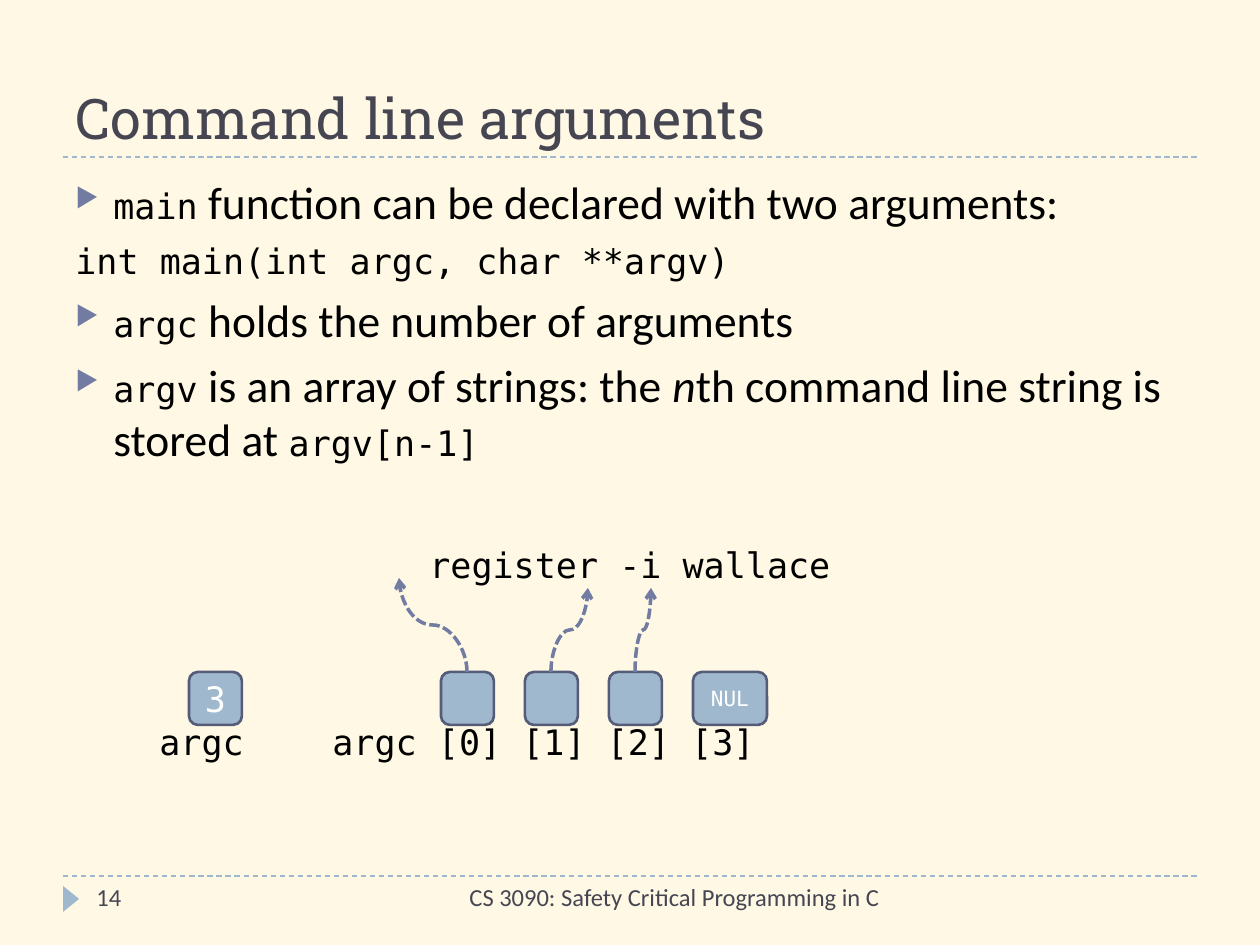
"""Build the slide on command line arguments in C."""
from lxml.etree import SubElement
from pptx import Presentation
from pptx.dml.color import RGBColor
from pptx.enum.dml import MSO_LINE as Dash
from pptx.enum.shapes import MSO_CONNECTOR as Connector, MSO_SHAPE as Shape
from pptx.enum.text import MSO_ANCHOR as Anchor, PP_ALIGN as Align
from pptx.oxml.ns import qn
from pptx.util import Pt

PX = 914400 // 126
CREAM = RGBColor(0xFE, 0xF8, 0xE4)
SLATE = RGBColor(0x46, 0x46, 0x53)
BLUE = RGBColor(0x9F, 0xB8, 0xCD)
BORDER = RGBColor(0x54, 0x5C, 0x79)
ACCENT = RGBColor(0x72, 0x7C, 0xA3)
BLACK = RGBColor(0, 0, 0)
WHITE = RGBColor(0xFF, 0xFF, 0xFF)
SANS, MONO, SLAB = "Calibri", "DejaVu Sans Mono", "Roboto Slab"


def add_run(paragraph, text, font, size, color):
    run = paragraph.add_run()
    run.text = text
    run.font.name, run.font.size = font, Pt(size)
    run.font.color.rgb = color
    return run


def add_text(left, top, width, height, text, font, size, color, wrap=True):
    box = slide.shapes.add_textbox(left * PX, top * PX, width * PX, height * PX)
    box.text_frame.word_wrap = wrap
    if text:
        add_run(box.text_frame.paragraphs[0], text, font, size, color)
    return box.text_frame


presentation = Presentation()
presentation.slide_width, presentation.slide_height = 1260 * PX, 945 * PX
slide = presentation.slides.add_slide(presentation.slide_layouts[6])
slide.background.fill.solid()
slide.background.fill.fore_color.rgb = CREAM

for y in (876, 157):
    rule = slide.shapes.add_connector(Connector.STRAIGHT, 63 * PX, y * PX, 1197 * PX, y * PX)
    rule.line.color.rgb, rule.line.width = BLUE, Pt(0.75)
    rule.line.dash_style = Dash.DASH
    SubElement(rule._element.spPr, qn("a:effectLst"))

marker = slide.shapes.add_shape(Shape.ISOSCELES_TRIANGLE, 58 * PX, 891 * PX, 26 * PX, 16 * PX)
marker.rotation = 90
marker.shadow.inherit = False
marker.fill.solid()
marker.fill.fore_color.rgb = BLUE
marker.line.fill.background()

title = add_text(63, 21, 1134, 136, "Command line arguments", SLAB, 32, SLATE)
title.vertical_anchor = Anchor.BOTTOM
footer = add_text(399, 876, 493, 50, "CS 3090: Safety Critical Programming in C", SANS, 14, SLATE)
footer.paragraphs[0].alignment = Align.RIGHT
add_text(84, 876, 273, 50, "14", SANS, 14, SLATE)

BODY = [
    (True, 38, -38, 6, [("main", MONO), (" function can be declared with two arguments:", SANS)]),
    (False, 38, -38, 6, [("int main(int argc, char **argv)", MONO)]),
    (True, 38, -38, 6, [("argc", MONO), (" holds the number of arguments", SANS)]),
    (True, 38, -38, 6, [("argv", MONO), (" is an array of strings: the ", SANS), ("n", SANS),
                        ("th command line string is stored at ", SANS), ("argv[n-1]", MONO)]),
    (False, 354, 0, 44, [("register -i wallace", MONO)]),
]
body = add_text(63, 168, 1134, 680, "", SANS, 26, BLACK)
for index, (bulleted, margin, indent, space, runs) in enumerate(BODY):
    paragraph = body.add_paragraph() if index else body.paragraphs[0]
    paragraph.space_before = Pt(space)
    properties = paragraph._p.get_or_add_pPr()
    properties.set("marL", str(margin * PX))
    properties.set("indent", str(indent * PX))
    if bulleted:
        SubElement(SubElement(properties, qn("a:buClr")), qn("a:srgbClr"), val=str(ACCENT))
        SubElement(properties, qn("a:buSzPct"), val="76000")
        SubElement(properties, qn("a:buChar"), char="▶")
    for text, font in runs:
        run = add_run(paragraph, text, font, 20 if font == MONO else 26, BLACK)
        if text == "n":
            run.font.italic = True

CELLS = [(189, 53, "3", 20), (441, 53, "", 20), (525, 53, "", 20),
         (609, 53, "", 20), (693, 74, "NUL", 12)]
for left, width, text, size in CELLS:
    cell = slide.shapes.add_shape(Shape.ROUNDED_RECTANGLE, left * PX, 672 * PX, width * PX, 53 * PX)
    cell.shadow.inherit = False
    cell.fill.solid()
    cell.fill.fore_color.rgb = BLUE
    cell.line.color.rgb, cell.line.width = BORDER, Pt(1.5)
    cell.text_frame.vertical_anchor = Anchor.MIDDLE
    if text:
        paragraph = cell.text_frame.paragraphs[0]
        paragraph.alignment = Align.CENTER
        add_run(paragraph, text, MONO, size, WHITE)

add_text(147, 714, 111, 55, "argc", MONO, 20, BLACK, wrap=False)
add_text(320, 714, 450, 55, "argc [0] [1] [2] [3]", MONO, 20, BLACK, wrap=False)

for start_x, end_x, end_y in [(467, 399, 578), (551, 588, 588), (635, 651, 588)]:
    side = 1 if end_x > start_x else -1
    center_x, center_y = (start_x + end_x) * PX // 2, (672 + end_y) * PX // 2
    half_length, half_shift = (672 - end_y) * PX // 2, abs(end_x - start_x) * PX // 2
    arrow = slide.shapes.add_connector(
        Connector.CURVE, center_x + side * half_length, center_y + half_shift,
        center_x - side * half_length, center_y - half_shift)
    arrow._element.spPr.find(qn("a:xfrm")).set("rot", str((180 - 90 * side) * 60000))
    arrow.line.color.rgb, arrow.line.width = ACCENT, Pt(2)
    arrow.line.dash_style = Dash.SQUARE_DOT
    SubElement(arrow.line._get_or_add_ln(), qn("a:tailEnd"), type="arrow")
    SubElement(arrow._element.spPr, qn("a:effectLst"))

presentation.save("out.pptx")
